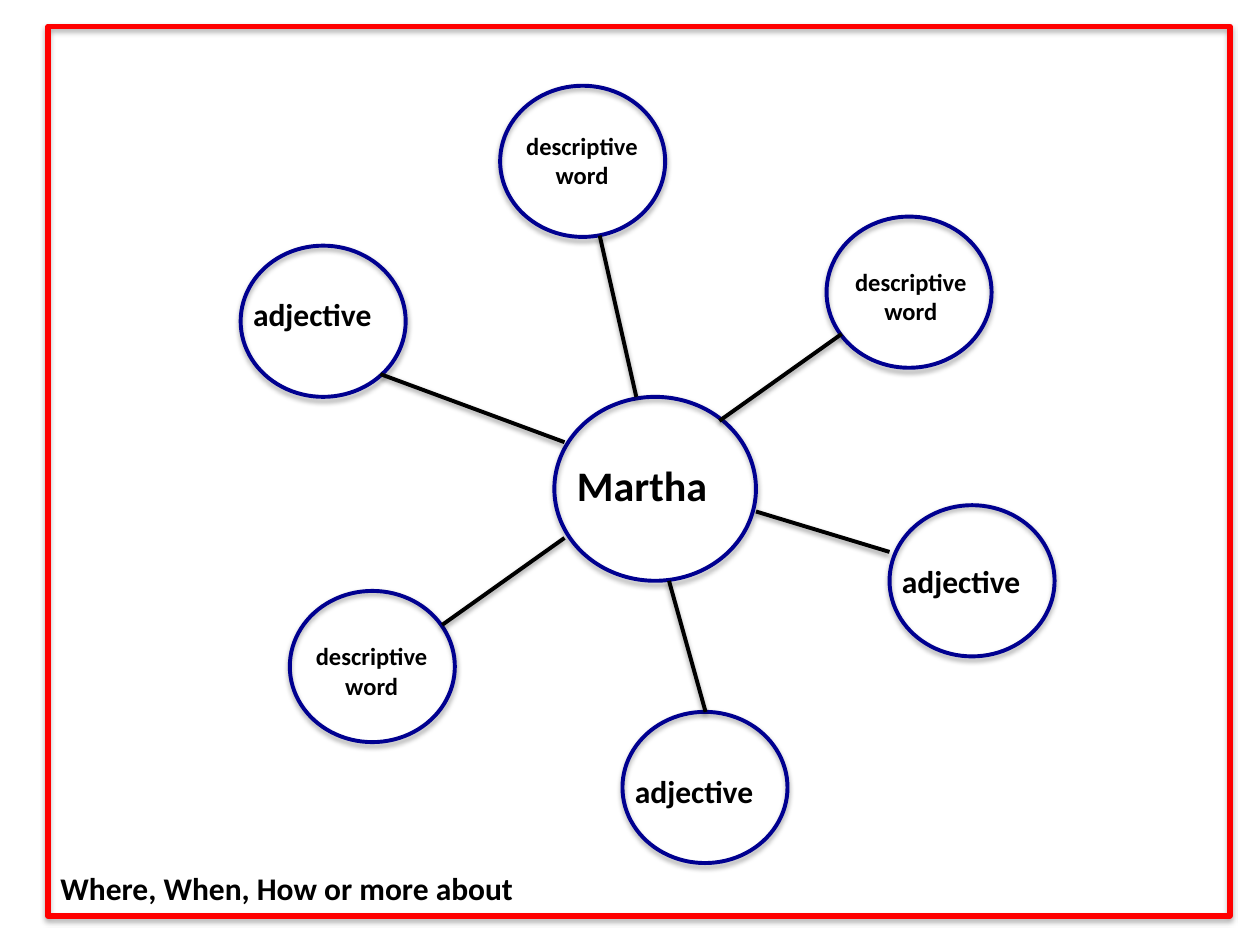
from lxml.etree import SubElement
from pptx import Presentation
from pptx.dml.color import RGBColor
from pptx.enum.shapes import MSO_CONNECTOR as Connector, MSO_SHAPE as Shape
from pptx.enum.text import MSO_AUTO_SIZE as AutoSize, PP_ALIGN as Align
from pptx.oxml.ns import qn
from pptx.util import Pt

COLORS = {"background": "FFFFFF", "bubble": "000090", "ink": "000000", "frame": "FF0000"}
HUB_SIZE = (115.2, 105.1)
BUBBLE_SIZE = (94.3, 86.4)

# Label styles: size of the box, font size and alignment
LABELS = {
    "adjective": {"size": (97.2, 29), "points": 18, "align": Align.LEFT},
    "descriptive\nword": {"size": (93.6, 41), "points": 14, "align": Align.CENTER},
    "Martha": {"size": (104.4, 36), "points": 24, "align": Align.LEFT},
    "Where, When, How or more about": {"size": (337.7, 29), "points": 18, "align": Align.LEFT},
}

# Bubbles in the web: left, top, label, label offset
HUB = (179.3, 177.8, "Martha", (5.8, 32.4))
BUBBLES = [
    (334.8, 74.8, "descriptive\nword", (1.4, 25.2)),
    (370.8, 239.7, "adjective", (0, 28.8)),
    (218.2, 357.8, "adjective", (0, 31)),
    (28.1, 288.7, "descriptive\nword", (0, 25.2)),
    (0, 91.4, "adjective", (0, 24.5)),
    (148.3, 0, "descriptive\nword", (0, 22.3)),
]
# Spokes in the web: start x, start y, end x, end y
SPOKES = [
    (343.5, 141.8, 273.6, 191.5),
    (370.8, 266.4, 294.5, 243.3),
    (185.1, 258.4, 115.2, 308.1),
    (265.7, 357.8, 244.8, 282.9),
    (185.1, 203.7, 79.9, 164.8),
    (205.2, 85.6, 226.1, 177.8),
]


def color(name):
    return RGBColor.from_string(COLORS[name])


def style_line(shape, name, width, distance=1.8, opacity=35):
    """Set the outline and a soft shadow that falls straight down."""
    shape.line.color.rgb = color(name)
    shape.line.width = Pt(width)
    effects = SubElement(shape._element.spPr, qn("a:effectLst"))
    shadow = SubElement(effects, qn("a:outerShdw"), blurRad=str(Pt(3.1)),
                        dist=str(Pt(distance)), dir="5400000", rotWithShape="0")
    tint = SubElement(shadow, qn("a:srgbClr"), val=COLORS["ink"])
    SubElement(tint, qn("a:alpha"), val=str(opacity * 1000))


def add_outline(slide, kind, box, name, width):
    shape = slide.shapes.add_shape(kind, *map(Pt, box))
    shape.fill.background()
    style_line(shape, name, width)


def add_label(slide, left, top, text):
    style = LABELS[text]
    label = slide.shapes.add_textbox(Pt(left), Pt(top), *map(Pt, style["size"]))
    frame = label.text_frame
    frame.word_wrap = True
    frame.auto_size = AutoSize.SHAPE_TO_FIT_TEXT
    frame.text = text
    font_values = {"name": "Calibri", "size": Pt(style["points"]), "bold": True}
    for paragraph in frame.paragraphs:
        paragraph.alignment = style["align"]
        font = paragraph.runs[0].font
        for attribute, value in font_values.items():
            setattr(font, attribute, value)
        font.color.rgb = color("ink")


def add_word_web(slide, left, top):
    # Hub and surrounding bubbles
    for bubble in [HUB, *BUBBLES]:
        size = HUB_SIZE if bubble is HUB else BUBBLE_SIZE
        box = (left + bubble[0], top + bubble[1], *size)
        add_outline(slide, Shape.OVAL, box, "bubble", 2.25)
    # Spokes
    for x1, y1, x2, y2 in SPOKES:
        ends = (left + x1, top + y1, left + x2, top + y2)
        spoke = slide.shapes.add_connector(Connector.STRAIGHT, *map(Pt, ends))
        style_line(spoke, "ink", 2.25, distance=1.6, opacity=38)
    # Labels
    for x, y, text, (dx, dy) in [HUB, *BUBBLES]:
        add_label(slide, left + x + dx, top + y + dy, text)


def add_frame(slide, left, top, width, height):
    add_outline(slide, Shape.RECTANGLE, (left, top, width, height), "frame", 3)
    add_label(slide, left, top + height - 30.2, "Where, When, How or more about")


def main():
    presentation = Presentation()
    presentation.slide_width, presentation.slide_height = Pt(720), Pt(540)
    slide = presentation.slides.add_slide(presentation.slide_layouts[6])
    slide.background.fill.solid()
    slide.background.fill.fore_color.rgb = color("background")
    add_word_web(slide, 137.5, 49)
    add_frame(slide, 27.4, 15.1, 675.4, 508.3)
    presentation.save("out.pptx")


if __name__ == "__main__":
    main()
